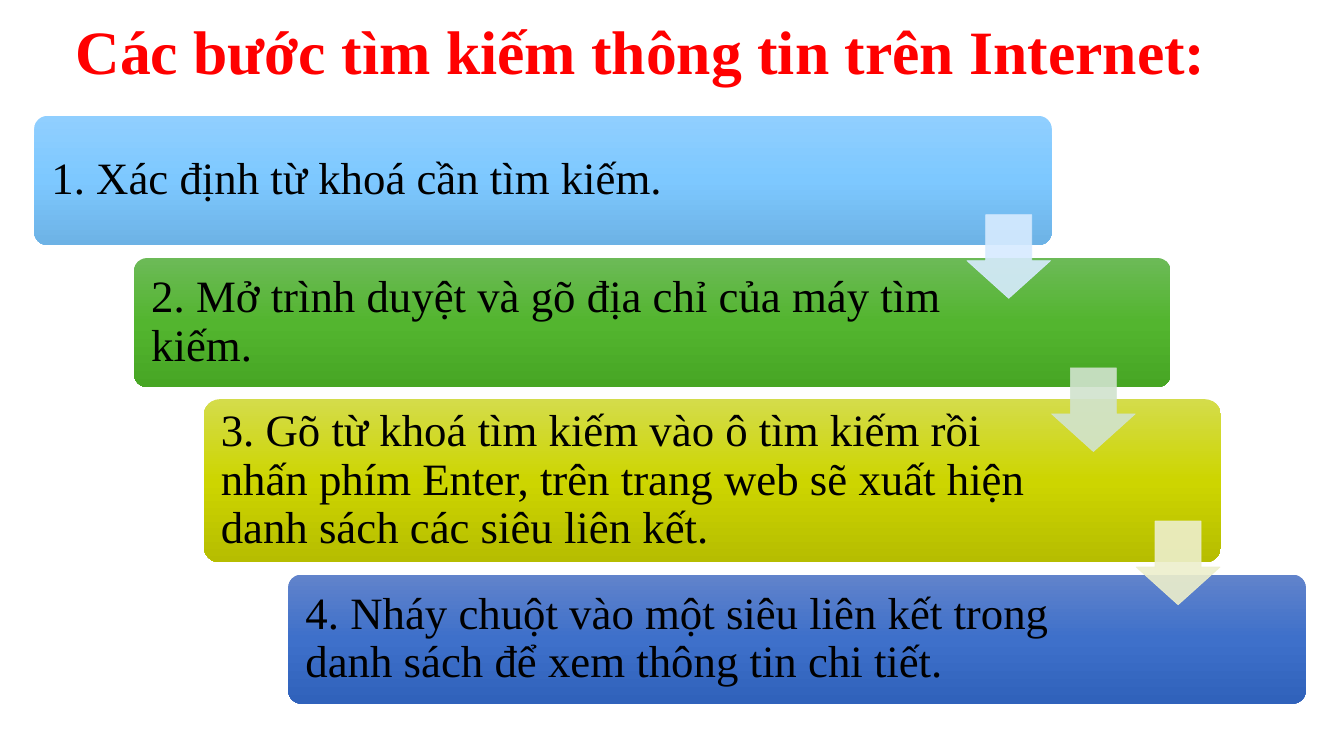
from copy import deepcopy

from lxml.etree import SubElement
from pptx import Presentation
from pptx.dml.color import RGBColor
from pptx.enum.shapes import MSO_SHAPE as Shape
from pptx.enum.text import MSO_ANCHOR as Anchor, PP_ALIGN as Align
from pptx.oxml.ns import qn
from pptx.util import Inches, Pt

FONT = "Times New Roman"
RED = RGBColor(0xFF, 0x00, 0x00)
BLACK = RGBColor(0x00, 0x00, 0x00)
SKY = [RGBColor(0x90, 0xCF, 0xFF), RGBColor(0x7D, 0xC8, 0xFF), RGBColor(0x6D, 0xB2, 0xE5)]
GREEN = [RGBColor(0x6C, 0xBA, 0x57), RGBColor(0x53, 0xB5, 0x2F), RGBColor(0x47, 0xA6, 0x24)]
LIME = [RGBColor(0xD4, 0xDC, 0x4B), RGBColor(0xCD, 0xD5, 0x00), RGBColor(0xB6, 0xBD, 0x00)]
BLUE = [RGBColor(0x61, 0x83, 0xCB), RGBColor(0x3E, 0x70, 0xCA), RGBColor(0x30, 0x62, 0xBB)]
ARROWS = [RGBColor(0xD7, 0xEB, 0xFF), RGBColor(0xD1, 0xE3, 0xCE), RGBColor(0xED, 0xEF, 0xCC)]

STEPS = [
    ("1. Xác định từ khoá cần tìm kiếm.", SKY, (0.34, 1.15, 10.09, 1.28), 8.59),
    ("2. Mở trình duyệt và gõ địa chỉ của máy tìm kiếm.", GREEN, (1.33, 2.56, 10.28, 1.28), 8.49),
    ("3. Gõ từ khoá tìm kiếm vào ô tìm kiếm rồi nhấn phím Enter, trên trang web "
     "sẽ xuất hiện danh sách các siêu liên kết.", LIME, (2.02, 3.96, 10.09, 1.62), 8.32),
    ("4. Nháy chuột vào một siêu liên kết trong danh sách để xem thông tin chi tiết.",
     BLUE, (2.86, 5.7, 10.09, 1.28), 8.33),
]


class StepsPage:
    """Draws the title, step bars and arrows on one slide."""

    def __init__(self, page):
        self.page = page

    def put_text(self, frame, text, size, color, bold=False):
        """Set one styled paragraph."""
        frame.word_wrap = True
        para = frame.paragraphs[0]
        para.alignment = Align.LEFT
        para.line_spacing = 0.9
        span = para.add_run()
        span.text = text
        span.font.name = FONT
        span.font.size = Pt(size)
        span.font.bold = bold
        span.font.color.rgb = color

    def title(self, text):
        """Place and fill the title placeholder."""
        box = self.page.shapes.title
        box.left, box.top, box.width, box.height = map(Inches, (0.65, 0.16, 11.5, 1.45))
        box.text_frame.vertical_anchor = Anchor.TOP
        self.put_text(box.text_frame, text, 44, RED, True)

    def preset(self, kind, place, adjustments):
        """Add a preset shape without shadow."""
        shape = self.page.shapes.add_shape(kind, *map(Inches, place))
        shape.shadow.inherit = False
        for index, value in enumerate(adjustments):
            shape.adjustments[index] = value
        return shape

    def bar(self, place, colors):
        """Add a rounded bar with a vertical three-colour gradient."""
        bar = self.preset(Shape.ROUNDED_RECTANGLE, place, [0.1])
        bar.line.fill.background()
        bar.fill.gradient()
        bar.fill.gradient_angle = 270
        stop_list = bar._element.spPr.find(qn("a:gradFill")).find(qn("a:gsLst"))
        stop_list.insert(1, deepcopy(stop_list[0]))
        for stop, position, color in zip(bar.fill.gradient_stops, (0, 0.5, 1), colors):
            stop.position = position
            stop.color.rgb = color

    def label(self, place, text):
        """Add the text of a step."""
        frame = self.page.shapes.add_textbox(*map(Inches, place)).text_frame
        frame.margin_left = frame.margin_right = Inches(0.13)
        frame.margin_top = frame.margin_bottom = Inches(0.13)
        frame.vertical_anchor = Anchor.MIDDLE
        self.put_text(frame, text, 32, BLACK)

    def step(self, text, colors, place, text_width):
        """Add a bar and its text."""
        left, top, _, height = place
        self.bar(place, colors)
        self.label((left + 0.04, top + 0.04, text_width, height - 0.08), text)

    def arrow(self, left, top, color):
        """Add a slightly transparent down arrow."""
        arrow = self.preset(Shape.DOWN_ARROW, (left, top, 0.83, 0.83), [0.55, 0.45])
        arrow.line.width = Pt(0.5)
        for fill in (arrow.fill, arrow.line.fill):
            fill.solid()
            fill.fore_color.rgb = color
        for tint in arrow._element.spPr.iter(qn("a:srgbClr")):
            SubElement(tint, qn("a:alpha"), val="90000")


def main():
    """Build and save the deck."""
    deck = Presentation()
    deck.slide_width, deck.slide_height = Inches(13.33), Inches(7.5)
    page = StepsPage(deck.slides.add_slide(deck.slide_layouts[5]))
    page.title("Các bước tìm kiếm thông tin trên Internet:")
    for step in STEPS:
        page.step(*step)
    for index, color in enumerate(ARROWS):
        page.arrow(9.59 + 0.84 * index, 2.13 + 1.52 * index, color)
    deck.save("out.pptx")


if __name__ == "__main__":
    main()
